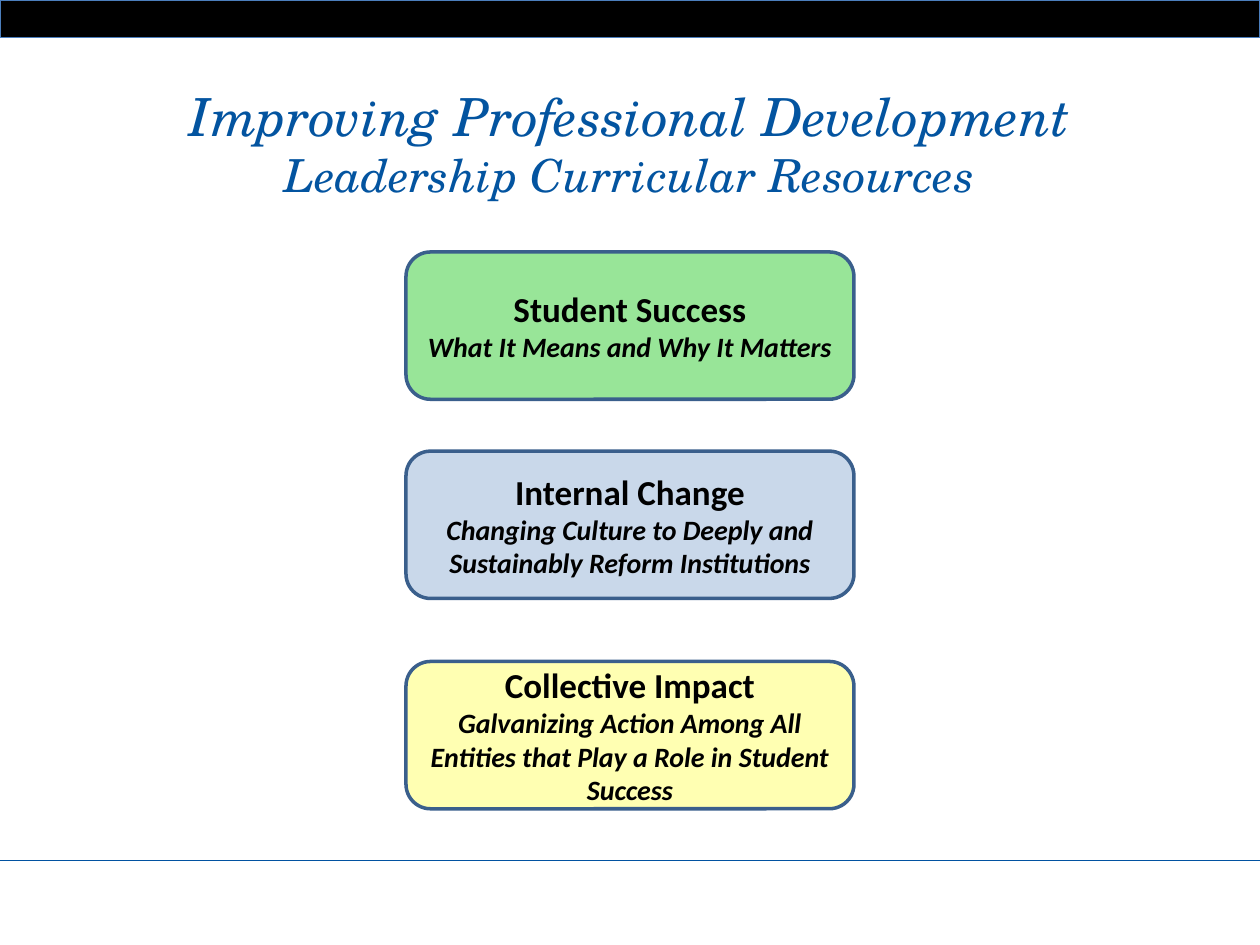
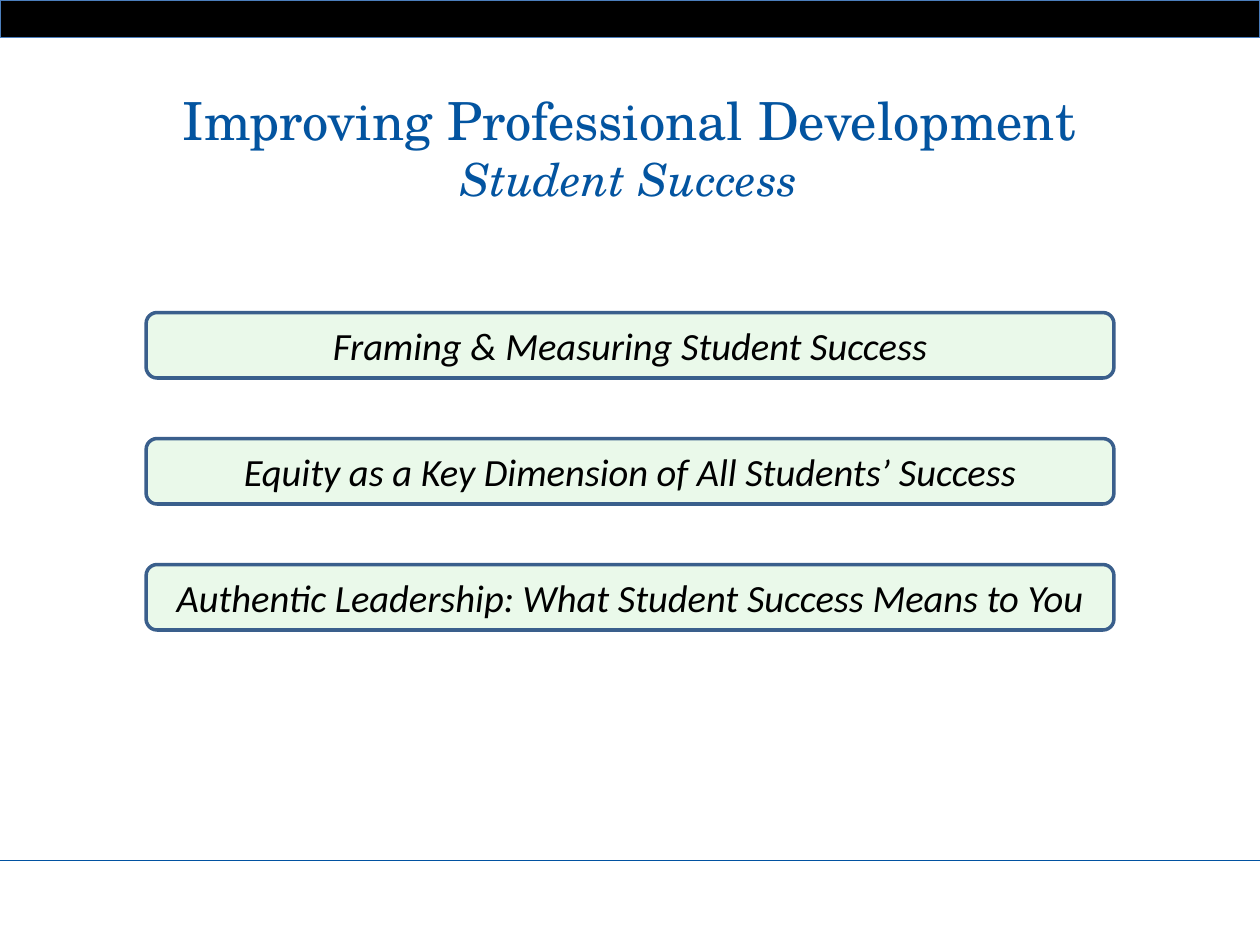
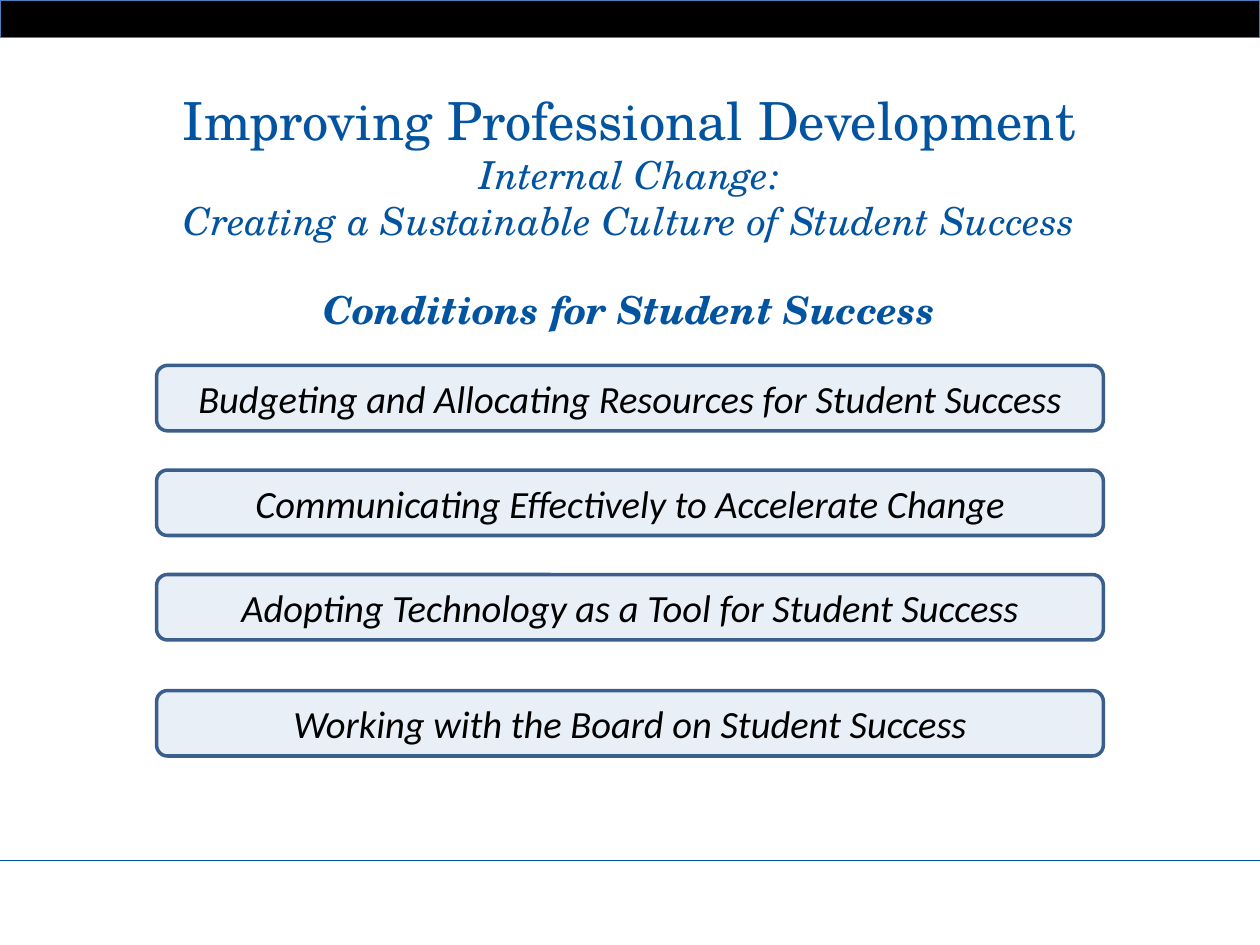
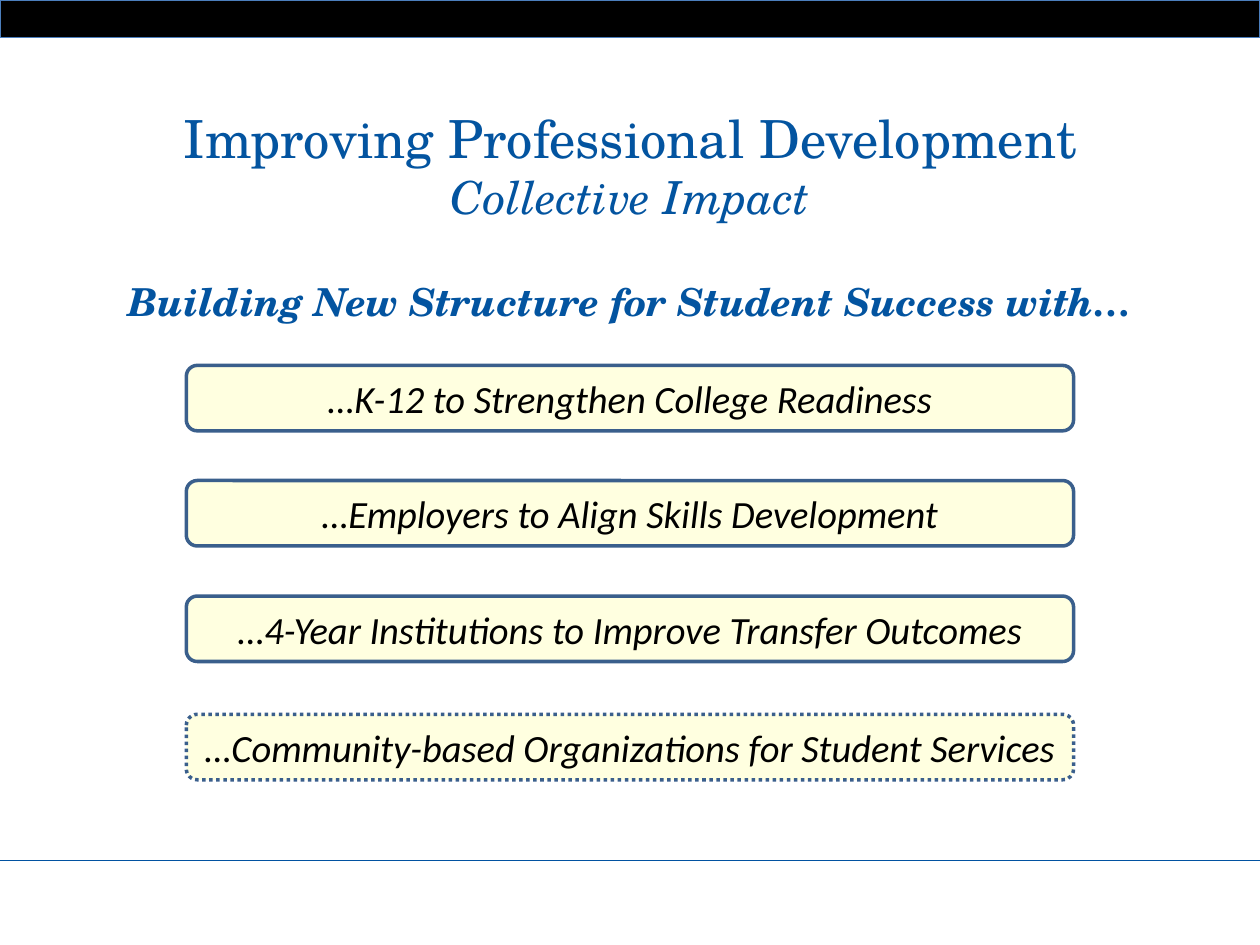
from lxml.etree import SubElement
from pptx import Presentation
from pptx.dml.color import RGBColor
from pptx.enum.dml import MSO_LINE
from pptx.enum.shapes import MSO_CONNECTOR, MSO_SHAPE
from pptx.enum.text import MSO_ANCHOR, MSO_AUTO_SIZE, PP_ALIGN
from pptx.oxml.ns import qn
from pptx.util import Pt

# Shared style
SLIDE_WIDTH, SLIDE_HEIGHT = 720, 540
BAND_HEIGHT, FOOTER_LINE_TOP = 21.6, 491.8
BLACK, BAND_EDGE, FOOTER_BLUE = "000000", "4B7EBC", "0152A1"
TITLE_BLUE, BOX_EDGE = "0354A0", "3A5F8C"
GREEN, BLUE, YELLOW = "33CC33", "95B3D7", "FFFF99"
TITLE_FONT, BOX_FONT = "TeX Gyre Schola", "Calibri"

HEADING = "Improving Professional Development"
UPRIGHT = {"size": Pt(30), "italic": False, "bold": False}
SUBTITLE = {"size": Pt(26), "italic": True, "bold": False}
SMALL_SUBTITLE = {"size": Pt(22), "italic": True, "bold": False}
LEAD_IN = {"size": Pt(22), "italic": True, "bold": True}
BOX_NAME = {"size": Pt(20), "bold": True, "italic": False}
BOX_DETAIL = {"size": Pt(16), "bold": True, "italic": True}
TOPIC = {"size": Pt(22), "bold": False, "italic": True}

# Content: title lines are (text, format, space before); boxes are lists of lines
SLIDES = [
    {
        "title_box": (0, 44.6, 720, 75),
        "title": [(HEADING, UPRIGHT | {"italic": True}, 0),
                  ("Leadership Curricular Resources", SUBTITLE, 0)],
        "size": (256, 84.2),
        "tops": [144, 257.8, 378],
        "fills": [(GREEN, 50), (BLUE, 50), (YELLOW, 75)],
        "boxes": [
            [("Student Success", BOX_NAME, 0),
             ("What It Means and Why It Matters", BOX_DETAIL, 0)],
            [("Internal Change", BOX_NAME, 0),
             ("Changing Culture to Deeply and Sustainably Reform Institutions",
              BOX_DETAIL, 0)],
            [("Collective Impact", BOX_NAME, 0),
             ("Galvanizing Action Among All Entities that Play a Role in "
              "Student Success", BOX_DETAIL, 0)],
        ],
    },
    {
        "title_box": (15.1, 46.8, 689, 75),
        "title": [(HEADING, UPRIGHT, 0), ("Student Success", SUBTITLE, 0)],
        "size": (553, 37.4),
        "tops": [178.6, 250.6, 322.6],
        "fills": [(GREEN, 10)] * 3,
        "boxes": [
            [("Framing & Measuring Student Success", TOPIC, 0)],
            [("Equity as a Key Dimension of All Students’ Success", TOPIC, 0)],
            [("Authentic Leadership: What Student Success Means to You", TOPIC, 0)],
        ],
    },
    {
        "title_box": (15.1, 46.8, 689, 179.3),
        "title": [(HEADING, UPRIGHT, 0),
                  ("Internal Change:", SMALL_SUBTITLE, 0),
                  ("Creating a Sustainable Culture of Student Success",
                   SMALL_SUBTITLE, 0),
                  ("Conditions for Student Success", LEAD_IN, 24)],
        "size": (541, 37.4),
        "tops": [208.8, 268.6, 328.3, 394.6],
        "fills": [(BLUE, 20)] * 4,
        "boxes": [
            [("Budgeting and Allocating Resources for Student Success", TOPIC, 0)],
            [("Communicating Effectively to Accelerate Change", TOPIC, 0)],
            [("Adopting Technology as a Tool for Student Success", TOPIC, 0)],
            [("Working with the Board on Student Success", TOPIC, 0)],
        ],
    },
    {
        "title_box": (15.8, 56.9, 689, 133.2),
        "title": [(HEADING, UPRIGHT, 0),
                  ("Collective Impact", SUBTITLE, 0),
                  ("Building New Structure for Student Success with…", LEAD_IN, 31)],
        "size": (507, 37.4),
        "tops": [208.8, 274.6, 340.6, 408.2],
        "fills": [(YELLOW, 30)] * 4,
        "dotted": 3,
        "boxes": [
            [("…K-12 to Strengthen College Readiness", TOPIC, 0)],
            [("…Employers to Align Skills Development", TOPIC, 0)],
            [("…4-Year Institutions to Improve Transfer Outcomes", TOPIC, 0)],
            [("…Community-based Organizations for Student Services", TOPIC, 0)],
        ],
    },
]


def color(hex_text):
    return RGBColor.from_string(hex_text)


def set_line(line, hex_text, width):
    line.color.rgb = color(hex_text)
    line.width = Pt(width)


def write_lines(text_frame, lines, font_name, hex_text):
    """Write centred paragraphs, one for each (text, format, space before)."""
    for index, (text, formats, space_before) in enumerate(lines):
        paragraph = text_frame.paragraphs[0] if index == 0 else text_frame.add_paragraph()
        paragraph.alignment = PP_ALIGN.CENTER
        paragraph.space_before = Pt(space_before)
        run = paragraph.add_run()
        run.text = text
        run.font.color.rgb = color(hex_text)
        for name, value in ({"name": font_name} | formats).items():
            setattr(run.font, name, value)


def add_filled_shape(slide, kind, box, fill, edge, edge_width, opacity=100):
    shape = slide.shapes.add_shape(kind, *map(Pt, box))
    shape.shadow.inherit = False
    shape.fill.solid()
    shape.fill.fore_color.rgb = color(fill)
    set_line(shape.line, edge, edge_width)
    if opacity < 100:
        fill_color = shape.fill._xPr.find(qn("a:solidFill"))[0]
        SubElement(fill_color, qn("a:alpha"), val=str(opacity * 1000))
    return shape


def add_master_parts(master, slide):
    """Draw the top band and the footer line, then move them to the master."""
    band = add_filled_shape(slide, MSO_SHAPE.RECTANGLE,
                            (0, 0, SLIDE_WIDTH, BAND_HEIGHT), BLACK, BAND_EDGE, 0.75)
    footer_line = slide.shapes.add_connector(
        MSO_CONNECTOR.STRAIGHT, Pt(0), Pt(FOOTER_LINE_TOP),
        Pt(SLIDE_WIDTH), Pt(FOOTER_LINE_TOP))
    set_line(footer_line.line, FOOTER_BLUE, 0.5)
    SubElement(footer_line.element.spPr, qn("a:effectLst"))
    for shape in (band, footer_line):
        master.element.cSld.spTree.append(shape.element)


def add_title(slide, box, lines):
    title = slide.shapes.title
    for name, value in zip(("left", "top", "width", "height"), box):
        setattr(title, name, Pt(value))
    text_frame = title.text_frame
    text_frame.word_wrap = True
    text_frame.auto_size = MSO_AUTO_SIZE.NONE
    text_frame.vertical_anchor = MSO_ANCHOR.TOP
    write_lines(text_frame, lines, TITLE_FONT, TITLE_BLUE)


def add_boxes(slide, content):
    """Stack the rounded boxes, each centred across the slide."""
    width, height = content["size"]
    left = (SLIDE_WIDTH - width) / 2
    rows = zip(content["tops"], content["fills"], content["boxes"])
    for index, (top, (fill, opacity), lines) in enumerate(rows):
        shape = add_filled_shape(slide, MSO_SHAPE.ROUNDED_RECTANGLE,
                                 (left, top, width, height), fill, BOX_EDGE, 2, opacity)
        if index == content.get("dotted"):
            shape.line.dash_style = MSO_LINE.ROUND_DOT
        shape.text_frame.word_wrap = True
        shape.text_frame.vertical_anchor = MSO_ANCHOR.MIDDLE
        write_lines(shape.text_frame, lines, BOX_FONT, BLACK)


def main():
    presentation = Presentation()
    presentation.slide_width = Pt(SLIDE_WIDTH)
    presentation.slide_height = Pt(SLIDE_HEIGHT)
    title_only = presentation.slide_layouts[5]
    for index, content in enumerate(SLIDES):
        slide = presentation.slides.add_slide(title_only)
        if index == 0:
            add_master_parts(presentation.slide_master, slide)
        add_title(slide, content["title_box"], content["title"])
        add_boxes(slide, content)
    presentation.save("out.pptx")


if __name__ == "__main__":
    main()
